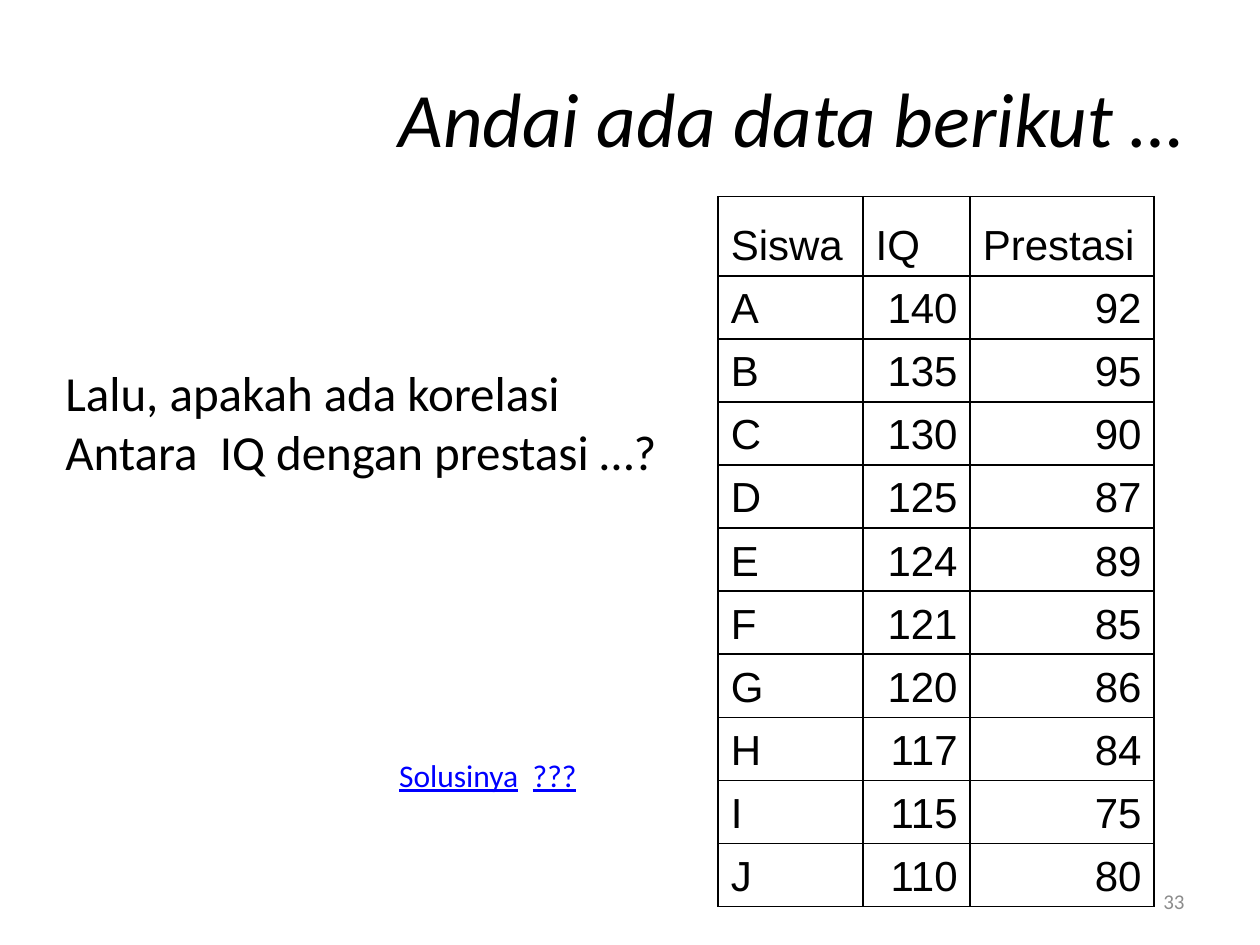
from lxml import etree
from pptx import Presentation
from pptx.dml.color import RGBColor
from pptx.enum.text import MSO_ANCHOR, PP_ALIGN
from pptx.oxml.ns import qn
from pptx.util import Inches, Pt

LEFT, RIGHT = PP_ALIGN.LEFT, PP_ALIGN.RIGHT
TOP, MIDDLE, BOTTOM = MSO_ANCHOR.TOP, MSO_ANCHOR.MIDDLE, MSO_ANCHOR.BOTTOM

COLORS = {"ink": "000000", "link": "0000FF", "muted": "8C8C8C"}
BODY_FONT, TABLE_FONT = "Calibri", "Arial"
SLIDE_W, SLIDE_H = Inches(10), Inches(7.5)
COLS, ROWS = 100, 75

HEADERS = ("Siswa", "IQ", "Prestasi")
SCORES = (
    ("A", 140, 92), ("B", 135, 95), ("C", 130, 90), ("D", 125, 87),
    ("E", 124, 89), ("F", 121, 85), ("G", 120, 86), ("H", 117, 84),
    ("I", 115, 75), ("J", 110, 80),
)
TABLE_COLS = (11.5, 8.5, 14.6)
HEADER_ROW, SCORE_ROW = 6.3, 3.9


def across(cols):
    return round(SLIDE_W * cols / COLS)


def down(rows):
    return round(SLIDE_H * rows / ROWS)


def place(box):
    x, y, w, h = box
    return across(x), down(y), across(w), down(h)


def add_run(p, text, size, font=BODY_FONT, color="ink", italic=False, underline=False):
    r = p.add_run()
    r.text = text
    r.font.name = font
    r.font.size = Pt(size)
    r.font.italic = italic
    r.font.underline = underline
    r.font.color.rgb = RGBColor.from_string(COLORS[color])


def add_text_frame(s, box, anchor=TOP):
    tf = s.shapes.add_textbox(*place(box)).text_frame
    tf.word_wrap = True
    tf.vertical_anchor = anchor
    return tf


def add_title(s, box):
    p = add_text_frame(s, box, MIDDLE).paragraphs[0]
    p.alignment = RIGHT
    add_run(p, "Andai ada data berikut …", 44, italic=True)


def add_question(s, box):
    tf = add_text_frame(s, box)
    add_run(tf.paragraphs[0], "Lalu, apakah ada korelasi", 28)
    add_run(tf.add_paragraph(), "Antara  IQ dengan prestasi …?", 28)


def add_solution(s, box):
    p = add_text_frame(s, box).paragraphs[0]
    add_run(p, "Solusinya", 18, color="link", underline=True)
    add_run(p, "  ", 18)
    add_run(p, "???", 18, color="link", underline=True)


def add_page_number(s, box):
    p = add_text_frame(s, box, MIDDLE).paragraphs[0]
    p.alignment = RIGHT
    add_run(p, "33", 12, color="muted")


def set_borders(cell):
    tc_pr = cell._tc.get_or_add_tcPr()
    for i, side in enumerate(("a:lnL", "a:lnR", "a:lnT", "a:lnB")):
        ln = etree.Element(qn(side), w=str(Pt(1)))
        fill = etree.SubElement(ln, qn("a:solidFill"))
        etree.SubElement(fill, qn("a:srgbClr"), val=COLORS["ink"])
        tc_pr.insert(i, ln)


def fill_cell(cell, value):
    cell.fill.background()
    cell.vertical_anchor = BOTTOM
    set_borders(cell)
    p = cell.text_frame.paragraphs[0]
    p.alignment = RIGHT if isinstance(value, int) else LEFT
    p_pr = p._p.get_or_add_pPr()
    p_pr.set("marL", str(across(3.8)))
    p_pr.set("indent", str(-across(3.8)))
    add_run(p, str(value), 24, TABLE_FONT)


def add_score_table(s, x, y):
    records = (HEADERS, *SCORES)
    heights = [HEADER_ROW] + [SCORE_ROW] * len(SCORES)
    box = (x, y, sum(TABLE_COLS), sum(heights))
    table = s.shapes.add_table(len(records), len(HEADERS), *place(box)).table
    table.first_row = table.horz_banding = False
    for column, width in zip(table.columns, TABLE_COLS):
        column.width = across(width)
    for row, height, record in zip(table.rows, heights, records):
        row.height = down(height)
        for cell, value in zip(row.cells, record):
            fill_cell(cell, value)


def main():
    prs = Presentation()
    prs.slide_width, prs.slide_height = SLIDE_W, SLIDE_H
    s = prs.slides.add_slide(prs.slide_layouts[6])
    add_page_number(s, (71.7, 69.5, 23.3, 4))
    add_title(s, (5, 3, 90, 12.5))
    add_score_table(s, 57, 15.6)
    add_question(s, (4.2, 28.3, 55.9, 10.3))
    add_solution(s, (30.7, 59.5, 22.7, 5))
    prs.save("out.pptx")


if __name__ == "__main__":
    main()
